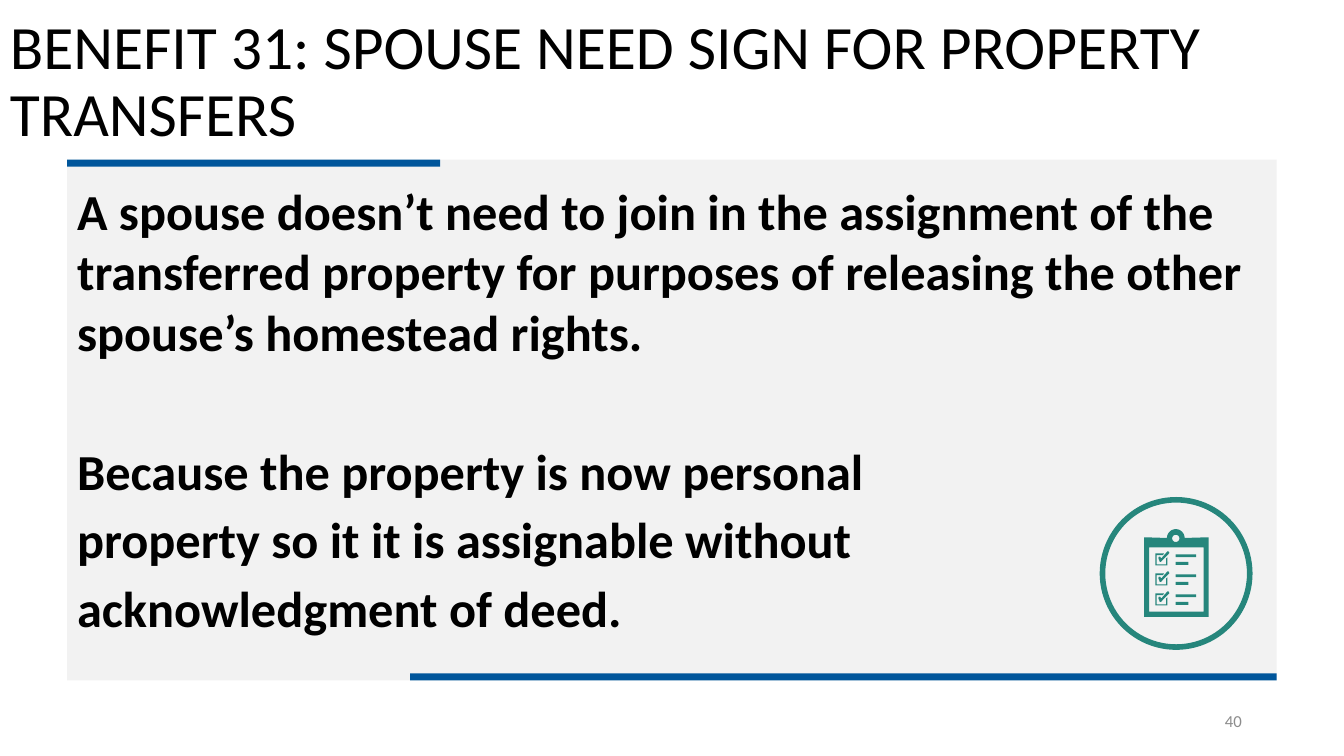
"""Builds the slide on spouse signatures for property transfers."""
from math import cos, pi, sin

from pptx import Presentation
from pptx.dml.color import RGBColor
from pptx.enum.shapes import MSO_SHAPE
from pptx.enum.text import MSO_ANCHOR, PP_ALIGN
from pptx.util import Pt

RECT, OVAL = MSO_SHAPE.RECTANGLE, MSO_SHAPE.OVAL
TOP, MIDDLE = MSO_ANCHOR.TOP, MSO_ANCHOR.MIDDLE
LEFT, RIGHT = PP_ALIGN.LEFT, PP_ALIGN.RIGHT
COLORS = {"text": "000000", "number": "8C8C8C", "panel": "F2F2F2",
          "bar": "00569B", "icon": "26867C"}
FONT = "Calibri"
UNITS = 100


def arc(cx, cy, r, start, end, steps=24):
    angles = [start + (end - start) * i / steps for i in range(steps + 1)]
    return [(cx + r * cos(a), cy + r * sin(a)) for a in angles]


class SlideBuilder:
    def __init__(self, slide):
        self.s = slide

    def color(self, name):
        return RGBColor.from_string(COLORS[name])

    def paint(self, sp, fill):
        sp.shadow.inherit = False
        sp.fill.solid()
        sp.fill.fore_color.rgb = self.color(fill)
        sp.line.fill.background()

    def rect(self, x, y, w, h, fill):
        sp = self.s.shapes.add_shape(RECT, Pt(x), Pt(y), Pt(w), Pt(h))
        self.paint(sp, fill)
        return sp

    def ring(self, x, y, d, color, width):
        sp = self.s.shapes.add_shape(OVAL, Pt(x), Pt(y), Pt(d), Pt(d))
        sp.shadow.inherit = False
        sp.fill.background()
        sp.line.color.rgb = self.color(color)
        sp.line.width = Pt(width)

    def outline(self, x, y, contours, fill):
        scaled = [[((x + px) * UNITS, (y + py) * UNITS) for px, py in c] for c in contours]
        fb = self.s.shapes.build_freeform(*scaled[0][0], scale=Pt(1) / UNITS)
        fb.add_line_segments(scaled[0][1:], close=True)
        for contour in scaled[1:]:
            fb.move_to(*contour[0])
            fb.add_line_segments(contour[1:], close=True)
        self.paint(fb.convert_to_shape(), fill)

    def textbox(self, x, y, w, h, *args, **style):
        sp = self.s.shapes.add_textbox(Pt(x), Pt(y), Pt(w), Pt(h))
        self.set_text(sp, *args, **style)

    def set_text(self, sp, paragraphs, size, color="text", bold=False,
                 align=LEFT, anchor=MIDDLE, top=3.6, spacing=None):
        tf = sp.text_frame
        tf.word_wrap = True
        tf.vertical_anchor = anchor
        tf.margin_left = tf.margin_right = Pt(7.2)
        tf.margin_top, tf.margin_bottom = Pt(top), Pt(3.6)
        for i, (text, before) in enumerate(paragraphs):
            p = tf.paragraphs[0] if i == 0 else tf.add_paragraph()
            p.text = text
            p.alignment = align
            p.space_before = Pt(before)
            p.line_spacing = spacing
            p.font.name, p.font.size, p.font.bold = FONT, Pt(size), bold
            p.font.color.rgb = self.color(color)

    def checklist(self, x, y):
        board = [(0, 5.8), *arc(22.7, 6.3, 6.3, pi, 2 * pi), (46.1, 5.8), (46.1, 62.6), (0, 62.6)]
        sheet = [(3.6, 13), (42.5, 13), (42.5, 59), (3.6, 59)]
        self.outline(x, y, [board, arc(22.7, 6.6, 2.6, 0, 2 * pi), sheet], "icon")
        box = [(14.3, 17.3), (8.1, 17.3), (8.1, 25.9), (16.6, 25.9), (16.6, 20.1),
               (15.7, 21), (15.7, 25.1), (9, 25.1), (9, 18.5), (13.5, 18.5)]
        tick = [(16.7, 15.8), (12.3, 20.9), (11.4, 19.6), (10.4, 19.9), (10.2, 20.7),
                (11.2, 23.3), (12, 23.4), (18.1, 17.1), (17.5, 15.9)]
        for row in range(3):
            top = y + row * 14.3
            self.outline(x, top, [tick], "icon")
            self.outline(x, top, [box], "icon")
            self.rect(x + 22.5, top + 18, 14.7, 2, "icon")
            self.rect(x + 22.5, top + 23.4, 9.2, 2, "icon")


def main():
    prs = Presentation()
    prs.slide_width, prs.slide_height = Pt(960), Pt(540)
    b = SlideBuilder(prs.slides.add_slide(prs.slide_layouts[6]))
    b.textbox(0, 0, 946, 118.8,
              [("BENEFIT 31: SPOUSE NEED SIGN FOR PROPERTY TRANSFERS", 0)], 44, spacing=0.9)
    b.textbox(678.2, 500.5, 216, 28.8, [("40", 0)], 12, color="number", align=RIGHT)
    panel = b.rect(48, 114, 864, 372, "panel")
    b.set_text(panel, [
        ("A spouse doesn’t need to join in the assignment of the transferred property "
         "for purposes of releasing the other spouse’s homestead rights.", 0),
        ("Because the property is now personal", 56),
        ("property so it it is assignable without", 6),
        ("acknowledgment of deed.", 6),
    ], 36, bold=True, anchor=TOP, top=14.4)
    b.rect(293, 481, 619, 5, "bar")
    b.rect(48, 114, 266.4, 5, "bar")
    b.ring(787.5, 357, 105.2, "icon", 4)
    b.checklist(817.2, 378)
    prs.save("out.pptx")


if __name__ == "__main__":
    main()
